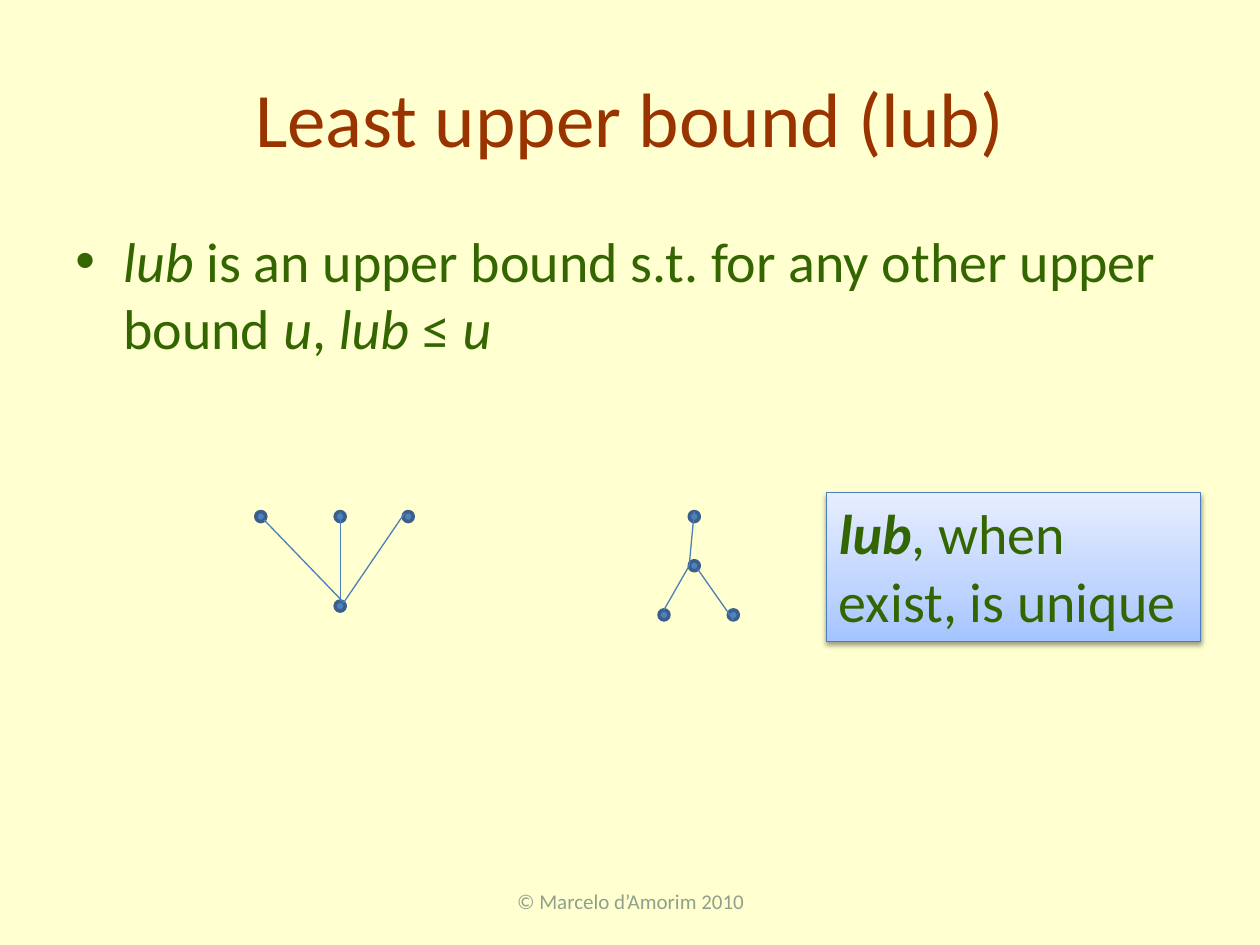
from pptx import Presentation, oxml
from pptx import util as u
from pptx.dml.color import RGBColor
from pptx.enum import shapes, text
from pptx.oxml import ns

CREAM = RGBColor(0xFF, 0xFF, 0xD0)
RUST = RGBColor(0x99, 0x33, 0x00)
GREEN = RGBColor(0x33, 0x66, 0x00)
SAGE = RGBColor(0x90, 0xA0, 0x8C)
DOT_BLUE = RGBColor(0x4F, 0x81, 0xBD)
DOT_EDGE = RGBColor(0x3A, 0x5F, 0x8C)
LINE_BLUE = RGBColor(0x4B, 0x7E, 0xBC)
DEEP_SKY = RGBColor(0xA4, 0xC4, 0xFF)
MID_SKY = RGBColor(0xBF, 0xD4, 0xFF)
PALE_SKY = RGBColor(0xE6, 0xEE, 0xFF)

COLUMNS, ROWS = 100, 75
CELL = u.Inches(10) / COLUMNS
FONT = "Calibri"
RADIUS = 0.4
DIAGONAL = 0.7

TOP, LEFT, BOTTOM = (0, -1), (-1, 0), (0, 1)
TOP_LEFT = (-DIAGONAL, -DIAGONAL)
TOP_RIGHT = (DIAGONAL, -DIAGONAL)
BOTTOM_RIGHT = (DIAGONAL, DIAGONAL)

DOTS = {
    "fan left": (20.7, 41),
    "fan middle": (27, 41),
    "fan right": (32.4, 41),
    "fan base": (27, 48.1),
    "tree top": (55.1, 41),
    "tree fork": (55.1, 44.9),
    "tree left": (52.7, 48.8),
    "tree right": (58.2, 48.8),
}
EDGES = [
    ("fan left", BOTTOM_RIGHT, "fan base", TOP_RIGHT),
    ("fan middle", TOP, "fan base", TOP),
    ("fan right", TOP_LEFT, "fan base", TOP_RIGHT),
    ("tree top", TOP, "tree fork", LEFT),
    ("tree fork", LEFT, "tree left", TOP),
    ("tree fork", BOTTOM_RIGHT, "tree right", BOTTOM),
]


def cells(*counts):
    return [u.Emu(round(count * CELL)) for count in counts]


def write(frame, spans, size, color, align=text.PP_ALIGN.LEFT,
          anchor=text.MSO_ANCHOR.TOP):
    frame.word_wrap = True
    frame.vertical_anchor = anchor
    para = frame.paragraphs[0]
    para.alignment = align
    for words, style in spans:
        span = para.add_run()
        span.text = words
        span.font.name = FONT
        span.font.size = u.Pt(size)
        span.font.color.rgb = color
        span.font.bold = "b" in style
        span.font.italic = "i" in style
    return para


def add_text(page, area, spans, size, color, **layout):
    box = page.shapes.add_textbox(*cells(*area))
    return write(box.text_frame, spans, size, color, **layout)


def add_bullet(para):
    properties = para._p.get_or_add_pPr()
    properties.set("marL", str(u.Inches(0.38)))
    properties.set("indent", str(u.Inches(-0.38)))
    for markup in (
        '<a:spcBef %s><a:spcPct val="20000"/></a:spcBef>',
        '<a:buFont %s typeface="Arial"/>',
        '<a:buChar %s char="•"/>',
    ):
        properties.append(oxml.parse_xml(markup % ns.nsdecls("a")))


def add_dot(page, column, row):
    dot = page.shapes.add_shape(
        shapes.MSO_SHAPE.OVAL,
        *cells(column - RADIUS, row - RADIUS, 2 * RADIUS, 2 * RADIUS))
    dot.shadow.inherit = False
    dot.fill.solid()
    dot.fill.fore_color.rgb = DOT_BLUE
    dot.line.color.rgb = DOT_EDGE
    dot.line.width = u.Pt(2)


def rim_point(name, direction):
    return [center + RADIUS * step
            for center, step in zip(DOTS[name], direction)]


def add_edge(page, start, start_side, end, end_side):
    ends = rim_point(start, start_side) + rim_point(end, end_side)
    edge = page.shapes.add_connector(shapes.MSO_CONNECTOR.STRAIGHT, *cells(*ends))
    edge.line.color.rgb = LINE_BLUE
    edge.line.width = u.Pt(0.75)
    edge._element.spPr.append(
        oxml.parse_xml("<a:effectLst %s/>" % ns.nsdecls("a")))


def fill_gradient(box):
    box.fill.gradient()
    box.fill.gradient_angle = 90
    stops = box.fill.gradient_stops
    for stop, color, position in zip(stops, (DEEP_SKY, PALE_SKY), (0, 1)):
        stop.color.rgb = color
        stop.position = position
    stop_list = box._element.spPr.find(".//" + ns.qn("a:gsLst"))
    stop_list.insert(1, oxml.parse_xml(
        '<a:gs %s pos="35000"><a:srgbClr val="%s"/></a:gs>'
        % (ns.nsdecls("a"), MID_SKY)))


def add_shadow(box):
    box.shadow.inherit = False
    effects = box._element.spPr.find(ns.qn("a:effectLst"))
    effects.append(oxml.parse_xml(
        '<a:outerShdw %s blurRad="%d" dist="%d" dir="5400000" rotWithShape="0">'
        '<a:srgbClr val="000000"><a:alpha val="38000"/></a:srgbClr>'
        "</a:outerShdw>" % (ns.nsdecls("a"), u.Pt(3.1), u.Pt(1.6))))


def add_callout(page, area, spans):
    box = page.shapes.add_shape(shapes.MSO_SHAPE.RECTANGLE, *cells(*area))
    fill_gradient(box)
    box.line.color.rgb = LINE_BLUE
    box.line.width = u.Pt(0.75)
    add_shadow(box)
    write(box.text_frame, spans, 32, GREEN)
    box.text_frame.auto_size = text.MSO_AUTO_SIZE.SHAPE_TO_FIT_TEXT


def main():
    deck = Presentation()
    deck.slide_width, deck.slide_height = cells(COLUMNS, ROWS)
    page = deck.slides.add_slide(deck.slide_layouts[6])
    page.background.fill.solid()
    page.background.fill.fore_color.rgb = CREAM

    centered = {"align": text.PP_ALIGN.CENTER, "anchor": text.MSO_ANCHOR.MIDDLE}
    add_text(page, (5, 3, 90, 12.5), [("Least upper bound (lub)", "")],
             44, RUST, **centered)
    definition = add_text(page, (5, 17.5, 90, 49.5), [
        ("lub", "i"),
        (" is an upper bound s.t. for any other upper bound ", ""),
        ("u", "i"), (", ", ""), ("lub ", "i"), ("≤ ", ""), ("u", "i"),
    ], 32, GREEN)
    add_bullet(definition)
    add_text(page, (34.2, 69.5, 31.7, 4), [("© Marcelo d’Amorim 2010", "")],
             12, SAGE, **centered)

    for center in DOTS.values():
        add_dot(page, *center)
    for edge in EDGES:
        add_edge(page, *edge)
    add_callout(page, (65.6, 39.1, 29.7, 11.8),
                [("lub", "bi"), (", when exist, is unique", "")])
    deck.save("out.pptx")


if __name__ == "__main__":
    main()
